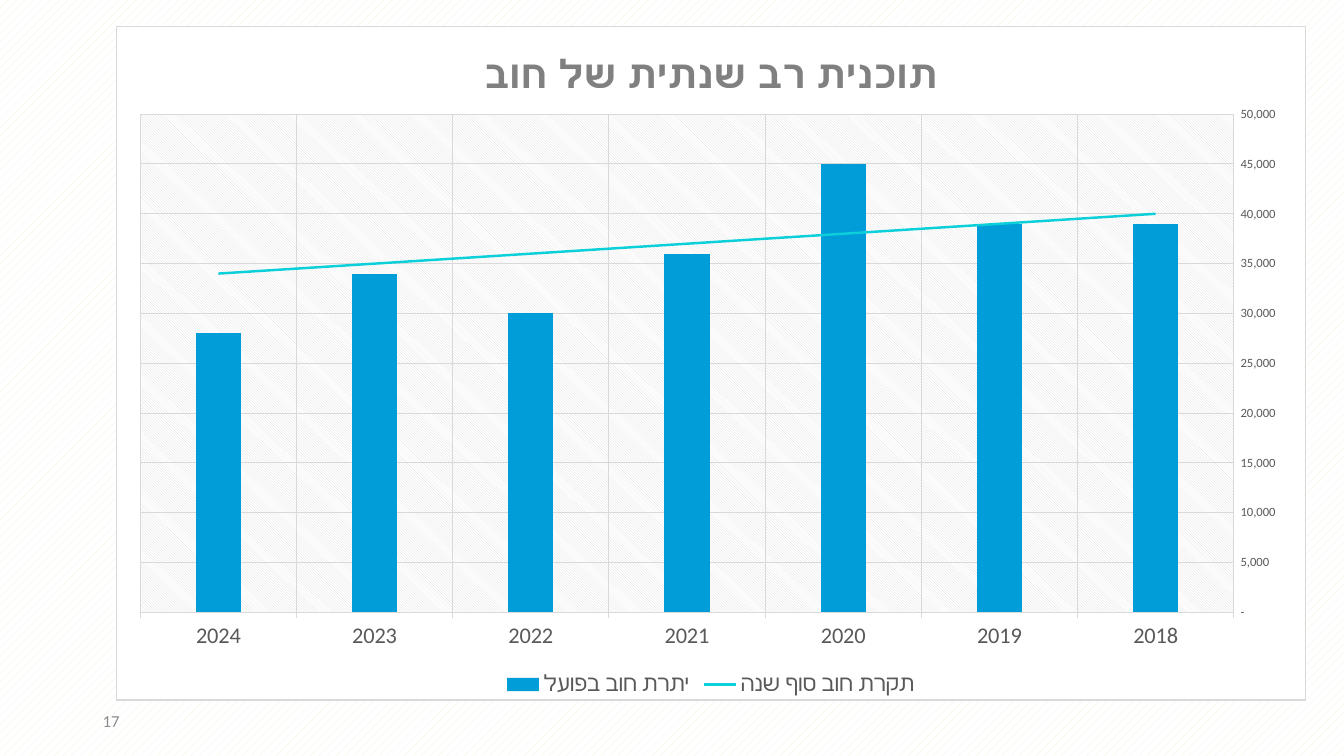
from dataclasses import dataclass

from lxml import etree
from pptx import Presentation
from pptx.chart import data as chart_data
from pptx.dml.color import RGBColor
from pptx.enum import chart as charts, dml, text
from pptx.oxml import parse_xml
from pptx.oxml.ns import nsdecls, qn
from pptx.util import Inches, Pt

FONT = "Calibri"
GRID, LABEL, WHITE = "D9D9D9", "595959", "FFFFFF"
YEARS = [str(year) for year in range(2018, 2025)]


@dataclass
class Measure:
    name: str
    values: list[int]
    color: str


ACTUAL = Measure("יתרת חוב בפועל",
                 [39000, 39000, 45000, 36000, 30000, 34000, 28000], "009DD9")
CEILING = Measure("תקרת חוב סוף שנה",
                  list(range(40000, 33000, -1000)), "0BD0D9")


def rgb(color: str) -> RGBColor:
    return RGBColor.from_string(color)


def style_font(font, size: float, color: str, bold: bool = False) -> None:
    font.name, font.size, font.bold = FONT, Pt(size), bold
    font.color.rgb = rgb(color)


def style_line(line, color: str, width: float = 0.75) -> None:
    line.color.rgb = rgb(color)
    line.width = Pt(width)


def add_text(page, content: str, left: float, top: float, width: float,
             height: float, *, size: float, color: str) -> None:
    box = page.shapes.add_textbox(*map(Inches, (left, top, width, height)))
    frame = box.text_frame
    frame.word_wrap = True
    frame.vertical_anchor = text.MSO_ANCHOR.MIDDLE
    para = frame.paragraphs[0]
    para.alignment = text.PP_ALIGN.LEFT
    span = para.add_run()
    span.text = content
    style_font(span.font, size, color)


def chart_xml(tag: str, content: str = "") -> etree._Element:
    return parse_xml(f"<c:{tag} {nsdecls('c', 'a')}>{content}</c:{tag}>")


def chart_value(tag: str, value: str) -> etree._Element:
    return parse_xml(f'<c:{tag} {nsdecls("c")} val="{value}"/>')


def solid(color: str) -> str:
    return f'<a:solidFill><a:srgbClr val="{color}"/></a:solidFill>'


def move_last_series_to_line(chart) -> None:
    """Turn the last column series into a line on the same axes."""
    bars = chart._chartSpace.find(".//" + qn("c:barChart"))
    series = bars.findall(qn("c:ser"))[-1]
    for column_only in series.findall(qn("c:invertIfNegative")):
        series.remove(column_only)
    series.find(qn("c:cat")).addprevious(
        chart_xml("marker", '<c:symbol val="none"/>'))
    for smooth in series.findall(qn("c:smooth")):
        series.remove(smooth)
    series.append(chart_value("smooth", "0"))
    lines = chart_xml("lineChart", '<c:grouping val="standard"/>'
                                   '<c:varyColors val="0"/>')
    lines.append(series)
    lines.append(chart_value("marker", "1"))
    for axis in bars.findall(qn("c:axId")):
        lines.append(chart_value("axId", axis.get("val")))
    bars.addnext(lines)


def style_areas(chart) -> None:
    """Fill the chart and plot areas and fix the plot's position."""
    space = chart._chartSpace
    for corners in space.findall(qn("c:roundedCorners")):
        space.remove(corners)
    start = space.find(qn("c:date1904"))
    if start is None:
        space.insert(0, chart_value("roundedCorners", "0"))
    else:
        start.addnext(chart_value("roundedCorners", "0"))
    space.find(qn("c:chart")).addnext(chart_xml(
        "spPr", f'{solid(WHITE)}<a:ln w="9525">{solid(GRID)}</a:ln>'))

    plot_area = space.find(".//" + qn("c:plotArea"))
    plot_area.append(chart_xml(
        "spPr", '<a:pattFill prst="ltDnDiag">'
                f'<a:fgClr><a:srgbClr val="{GRID}"/></a:fgClr>'
                f'<a:bgClr><a:srgbClr val="{WHITE}"/></a:bgClr>'
                '</a:pattFill><a:ln><a:noFill/></a:ln>'))
    for layout in plot_area.findall(qn("c:layout")):
        plot_area.remove(layout)
    place = {"x": 0.02, "y": 0.13, "w": 0.92, "h": 0.74}
    plot_area.insert(0, chart_xml(
        "layout", '<c:manualLayout><c:layoutTarget val="inner"/>'
                  '<c:xMode val="edge"/><c:yMode val="edge"/>'
                  + "".join(f'<c:{key} val="{share}"/>'
                            for key, share in place.items())
                  + '</c:manualLayout>'))


def add_debt_chart(page) -> None:
    table = chart_data.CategoryChartData()
    table.categories = YEARS
    for measure in (ACTUAL, CEILING):
        table.add_series(measure.name, measure.values)
    chart = page.shapes.add_chart(
        charts.XL_CHART_TYPE.COLUMN_CLUSTERED,
        *map(Inches, (1.15, 0.26, 11.8, 6.69)), table).chart
    style_font(chart.font, 10, "000000")

    chart.has_title = True
    chart.chart_title.include_in_layout = False
    span = chart.chart_title.text_frame.paragraphs[0].add_run()
    span.text = "תוכנית רב שנתית של חוב"
    style_font(span.font, 28, "808080", bold=True)

    chart.has_legend = True
    chart.legend.position = charts.XL_LEGEND_POSITION.BOTTOM
    chart.legend.include_in_layout = False
    style_font(chart.legend.font, 16, LABEL)

    years, amounts = chart.category_axis, chart.value_axis
    for axis, size in ((years, 16), (amounts, 9)):
        style_font(axis.tick_labels.font, size, LABEL)
        axis.has_major_gridlines = True
        style_line(axis.major_gridlines.format.line, GRID)
    years.reverse_order = True
    years.major_tick_mark = charts.XL_TICK_MARK.OUTSIDE
    style_line(years.format.line, GRID)
    amounts.major_tick_mark = charts.XL_TICK_MARK.NONE
    amounts.format.line.fill.background()
    amounts.minimum_scale, amounts.maximum_scale = 0, 50000
    amounts.major_unit = 5000
    amounts.tick_labels.number_format = (
        '_ * #,##0_ ;_ * \\-#,##0_ ;_ * "-"??_ ;_ ')
    amounts.tick_labels.number_format_is_linked = False

    plot = chart.plots[0]
    plot.gap_width = 247
    plot.vary_by_categories = False
    columns, ceiling = plot.series
    columns.format.fill.solid()
    columns.format.fill.fore_color.rgb = rgb(ACTUAL.color)
    style_line(ceiling.format.line, CEILING.color, 1.75)
    move_last_series_to_line(chart)
    style_areas(chart)


def main() -> None:
    deck = Presentation()
    deck.slide_width, deck.slide_height = Inches(13.33), Inches(7.5)
    page = deck.slides.add_slide(deck.slide_layouts[6])
    backdrop = page.background.fill
    backdrop.patterned()
    backdrop.pattern = dml.MSO_PATTERN.DASHED_UPWARD_DIAGONAL
    backdrop.fore_color.rgb = rgb("EDF3DB")
    backdrop.back_color.rgb = rgb(WHITE)
    add_text(page, "17", 0.92, 6.95, 3, 0.4, size=12, color="8C8C8C")
    add_debt_chart(page)
    deck.save("out.pptx")


if __name__ == "__main__":
    main()
